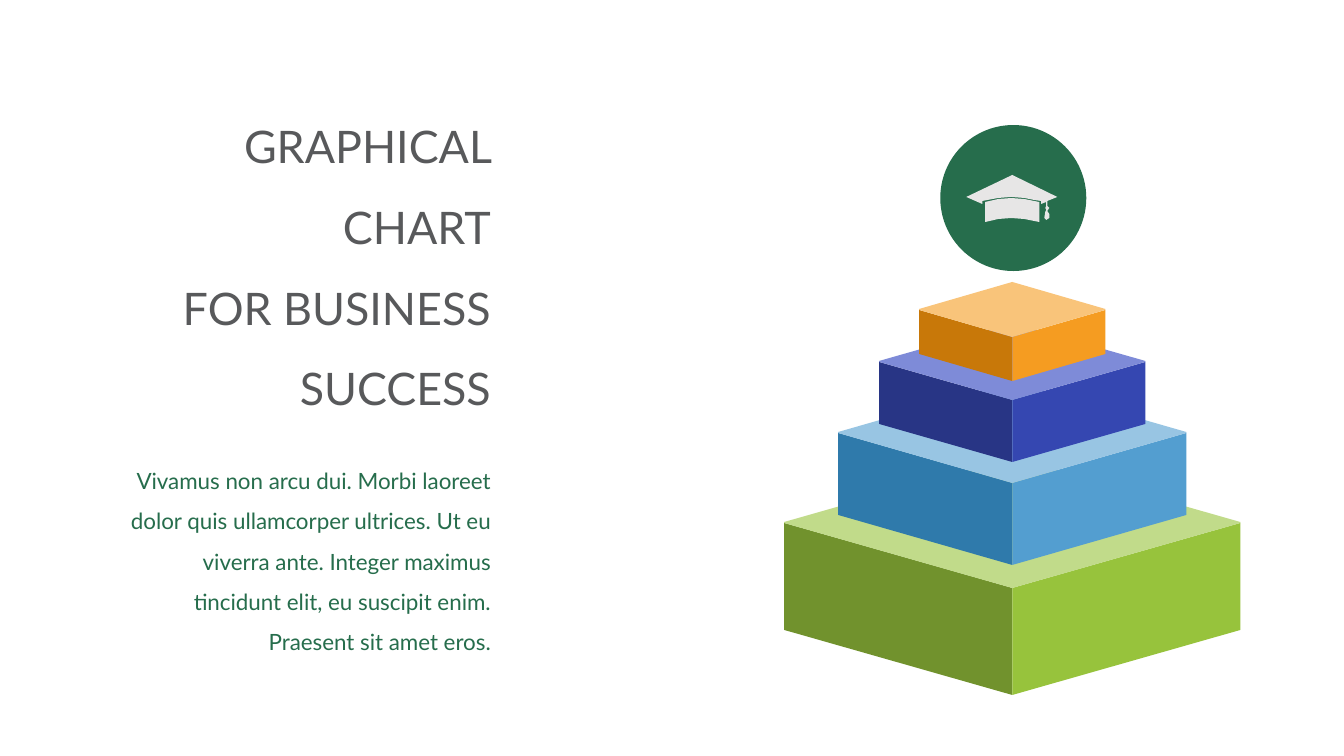
from pptx import Presentation
from pptx.dml.color import RGBColor
from pptx.enum.shapes import MSO_SHAPE
from pptx.enum.text import MSO_ANCHOR, MSO_AUTO_SIZE, PP_ALIGN
from pptx.oxml.ns import qn
from pptx.util import Inches, Pt

OVAL = MSO_SHAPE.OVAL
MIDDLE = MSO_ANCHOR.MIDDLE
NO_AUTOFIT = MSO_AUTO_SIZE.NONE
RIGHT = PP_ALIGN.RIGHT

PX = 914400 / 100.8  # EMU in one px

GREY = RGBColor(0x58, 0x59, 0x5B)
DARK_GREEN = RGBColor(0x26, 0x6D, 0x4C)
LIGHT_GREY = RGBColor(0xE7, 0xE6, 0xE6)
OLIVE = RGBColor(0x71, 0x92, 0x2D)
GREEN = RGBColor(0x97, 0xC3, 0x3C)
PALE_GREEN = RGBColor(0xC1, 0xDB, 0x8A)
DEEP_BLUE = RGBColor(0x2F, 0x7A, 0xAB)
BLUE = RGBColor(0x53, 0x9E, 0xD0)
PALE_BLUE = RGBColor(0x98, 0xC5, 0xE3)
DEEP_INDIGO = RGBColor(0x28, 0x35, 0x85)
INDIGO = RGBColor(0x35, 0x47, 0xB1)
PALE_INDIGO = RGBColor(0x7E, 0x8B, 0xD8)
DEEP_ORANGE = RGBColor(0xC8, 0x78, 0x09)
ORANGE = RGBColor(0xF5, 0x9C, 0x21)
PALE_ORANGE = RGBColor(0xF9, 0xC4, 0x7A)

PYRAMID_CENTER = 1012
LIP = 1
# half width, y of the front corner, depth, colours of left, right and top faces
TIERS = [
    (228, 588, 107, (OLIVE, GREEN, PALE_GREEN)),
    (174, 483, 82, (DEEP_BLUE, BLUE, PALE_BLUE)),
    (133, 400, 62, (DEEP_INDIGO, INDIGO, PALE_INDIGO)),
    (93, 337, 44, (DEEP_ORANGE, ORANGE, PALE_ORANGE)),
]

CAP_BAND = [
    (985, 202), (998, 199), (1011, 198), (1024, 199), (1034, 201), (1039, 202),
    (1039, 222), (1034, 221), (1024, 219), (1011, 218), (998, 219), (985, 222),
]
CAP_BOARD = [
    (1012, 175), (1057, 197), (1047, 201), (1047, 206), (1049, 208), (1047, 211),
    (1049, 214), (1049, 218), (1046, 220), (1044, 218), (1045, 212), (1046, 210),
    (1045, 208), (1046, 206), (1046, 202), (1041, 204), (1041, 201), (1034, 200),
    (1024, 198), (1011, 197), (998, 198), (982, 201), (982, 204), (966, 197),
]


def emu(px):
    return round(px * PX)


class SlideBuilder:
    def __init__(self, slide, font):
        self.slide = slide
        self.font = font

    def paint(self, shape, color):
        shape.shadow.inherit = False
        shape.fill.solid()
        shape.fill.fore_color.rgb = color
        shape.line.fill.background()

    def circle(self, left, top, diameter, color):
        size = emu(diameter)
        shape = self.slide.shapes.add_shape(OVAL, emu(left), emu(top), size, size)
        self.paint(shape, color)

    def polygon(self, group, points, color):
        outline = group.shapes.build_freeform(*points[0], scale=PX)
        outline.add_line_segments(points[1:], close=True)
        self.paint(outline.convert_to_shape(), color)

    def polygons(self, faces):
        """Draw (points, colour) pairs as one group."""
        group = self.slide.shapes.add_group_shape()
        for points, color in faces:
            self.polygon(group, points, color)

    def tier(self, half, front, depth, colors):
        center = PYRAMID_CENTER
        left, right = center - half, center + half
        rise = round(half * 2 / 7)
        corner = front - rise

        def side(edge):
            return [(center, front + depth), (edge, corner + depth),
                    (edge, corner), (center, front)]

        top = [(right, corner), (center, front), (left, corner),
               (left, corner - LIP), (center, corner - rise - LIP),
               (right, corner - LIP)]
        self.polygons(zip((side(left), side(right), top), colors))

    def text(self, box, paragraphs, *, left, top, width, height, size, color):
        """Move a placeholder and fill it with right-aligned, unbulleted text."""
        box.left, box.top = emu(left), emu(top)
        box.width, box.height = emu(width), emu(height)
        frame = box.text_frame
        frame.text = "\n".join(paragraphs)
        frame.word_wrap = True
        frame.auto_size = NO_AUTOFIT
        frame.vertical_anchor = MIDDLE
        for para in frame.paragraphs:
            para.alignment = RIGHT
            para.line_spacing = 1.5
            para.space_before = para.space_after = Pt(0)
            properties = para._p.get_or_add_pPr()
            properties.set("marL", "0")
            properties.set("indent", "0")
            properties.append(properties.makeelement(qn("a:buNone"), {}))
            for span in para.runs:
                span.font.name = self.font
                span.font.size = Pt(size)
                span.font.color.rgb = color


def main():
    deck = Presentation()
    deck.slide_width, deck.slide_height = Inches(13.33), Inches(7.5)
    page = deck.slides.add_slide(deck.slide_layouts[1])
    builder = SlideBuilder(page, "Lato")

    builder.text(page.shapes.title, ["GRAPHICAL CHART", "FOR BUSINESS SUCCESS"],
                 left=108, top=95, width=393, height=317, size=32, color=GREY)
    builder.text(page.placeholders[1],
                 ["Vivamus non arcu dui. Morbi laoreet dolor quis ullamcorper "
                  "ultrices. Ut eu viverra ante. Integer maximus tincidunt elit, "
                  "eu suscipit enim. Praesent sit amet eros."],
                 left=108, top=457, width=393, height=195, size=16, color=DARK_GREEN)

    builder.circle(940, 125, 146, DARK_GREEN)
    for tier in TIERS:
        builder.tier(*tier)
    builder.polygons([(CAP_BAND, LIGHT_GREY), (CAP_BOARD, LIGHT_GREY)])

    deck.save("out.pptx")


if __name__ == "__main__":
    main()
